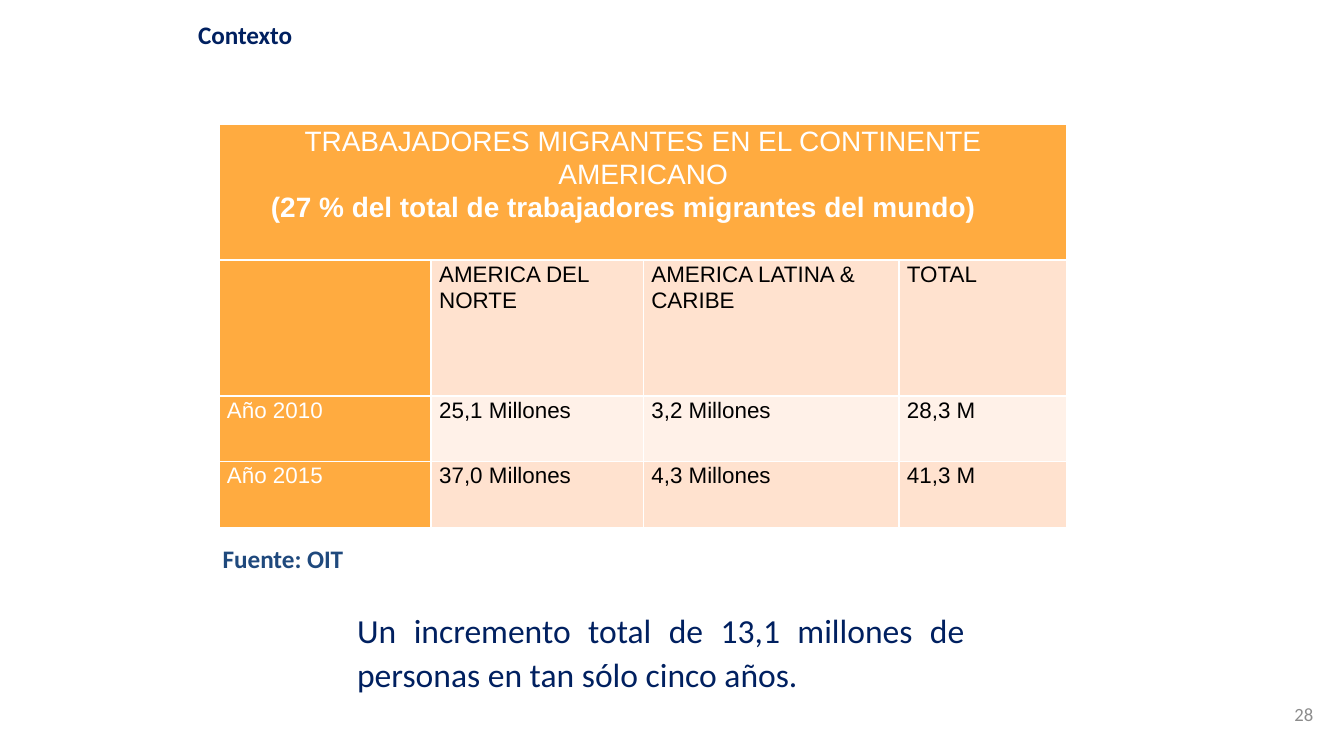
from lxml.etree import SubElement
from pptx import Presentation
from pptx.dml.color import RGBColor
from pptx.enum.text import MSO_ANCHOR, PP_ALIGN
from pptx.oxml.ns import qn
from pptx.util import Cm, Pt

NAVY = "002060"
ORANGE = "FFAB40"
PEACH = "FFE2CF"
PALE_PEACH = "FFF1E8"
WHITE = "FFFFFF"
COLUMN_WIDTHS = [4.01, 4.01, 4.83, 3.18]
ROW_HEIGHTS = [2.57, 2.57, 1.24, 1.24]
BODY_ROWS = [
    ["", "AMERICA DEL NORTE", "AMERICA LATINA & CARIBE", "TOTAL"],
    ["Año 2010", "25,1 Millones", "3,2 Millones", "28,3 M"],
    ["Año 2015", "37,0 Millones", "4,3 Millones", "41,3 M"],
]


def color(value):
    return RGBColor.from_string(value)


def write(paragraph, text, size=12, font="Arial", fill="000000", bold=False,
          align=PP_ALIGN.LEFT, spacing=None):
    paragraph.alignment = align
    paragraph.line_spacing = spacing
    run = paragraph.add_run()
    run.text = text
    run.font.size = Pt(size)
    run.font.name = font
    run.font.bold = bold
    run.font.color.rgb = color(fill)


def add_label(slide, box, text, wrap=False, anchor=MSO_ANCHOR.TOP, **text_format):
    shape = slide.shapes.add_textbox(*map(Cm, box))
    frame = shape.text_frame
    frame.word_wrap = wrap
    frame.vertical_anchor = anchor
    write(frame.paragraphs[0], text, font="Calibri", **text_format)


def style_cell(cell, fill):
    cell.margin_left = cell.margin_right = Cm(0.15)
    cell.margin_top = cell.margin_bottom = 0
    properties = cell._tc.get_or_add_tcPr()
    for side in ("lnL", "lnR", "lnT", "lnB"):
        line = SubElement(properties, qn(f"a:{side}"), w=str(Pt(1)))
        line_fill = SubElement(line, qn("a:solidFill"))
        SubElement(line_fill, qn("a:srgbClr"), val=WHITE)
    cell.fill.solid()
    cell.fill.fore_color.rgb = color(fill)


def add_heading(cell):
    frame = cell.text_frame
    write(frame.paragraphs[0], "TRABAJADORES MIGRANTES EN EL CONTINENTE AMERICANO",
          size=15, fill=WHITE, align=PP_ALIGN.CENTER, spacing=1.07)
    subtitle = frame.add_paragraph()
    write(subtitle, "(27 % del total de trabajadores migrantes del mundo)",
          size=15, fill=WHITE, bold=True, spacing=1.07)
    subtitle._p.get_or_add_pPr().set("marL", str(Cm(0.83)))


def add_migrant_table(slide, box):
    table = slide.shapes.add_table(
        len(ROW_HEIGHTS), len(COLUMN_WIDTHS), *map(Cm, box)).table
    for column, width in zip(table.columns, COLUMN_WIDTHS):
        column.width = Cm(width)
    for row, height in zip(table.rows, ROW_HEIGHTS):
        row.height = Cm(height)
    for cell in table.rows[0].cells:
        style_cell(cell, ORANGE)
    table.cell(0, 0).merge(table.cell(0, len(COLUMN_WIDTHS) - 1))
    add_heading(table.cell(0, 0))
    for row_index, values in enumerate(BODY_ROWS, start=1):
        band = PEACH if row_index % 2 else PALE_PEACH
        for column_index, value in enumerate(values):
            cell = table.cell(row_index, column_index)
            is_label = column_index == 0
            style_cell(cell, ORANGE if is_label else band)
            if value:
                write(cell.text_frame.paragraphs[0], value,
                      fill=WHITE if is_label else "000000", spacing=1.07)


def main():
    presentation = Presentation()
    presentation.slide_width = Cm(25.4)
    presentation.slide_height = Cm(14.28)
    slide = presentation.slides.add_slide(presentation.slide_layouts[6])
    add_label(slide, (3.96, 10.13, 2.82, 0.84), "Fuente: OIT",
              size=13.5, fill="1F497D", bold=True, align=PP_ALIGN.JUSTIFY)
    add_label(slide, (6.5, 11.35, 11.99, 1.9),
              "Un incremento total de 13,1 millones de personas en tan sólo cinco años.",
              wrap=True, size=18, fill=NAVY, align=PP_ALIGN.JUSTIFY, spacing=1.07)
    add_label(slide, (3.48, 0.25, 2.31, 0.84), "Contexto",
              size=13.5, fill=NAVY, bold=True, align=PP_ALIGN.CENTER)
    add_migrant_table(slide, (4.14, 2.34, sum(COLUMN_WIDTHS), sum(ROW_HEIGHTS)))
    add_label(slide, (23.55, 12.95, 1.52, 1.09), "28", wrap=True,
              anchor=MSO_ANCHOR.MIDDLE, size=10, fill="8C8C8C", align=PP_ALIGN.RIGHT)
    presentation.save("out.pptx")


if __name__ == "__main__":
    main()
